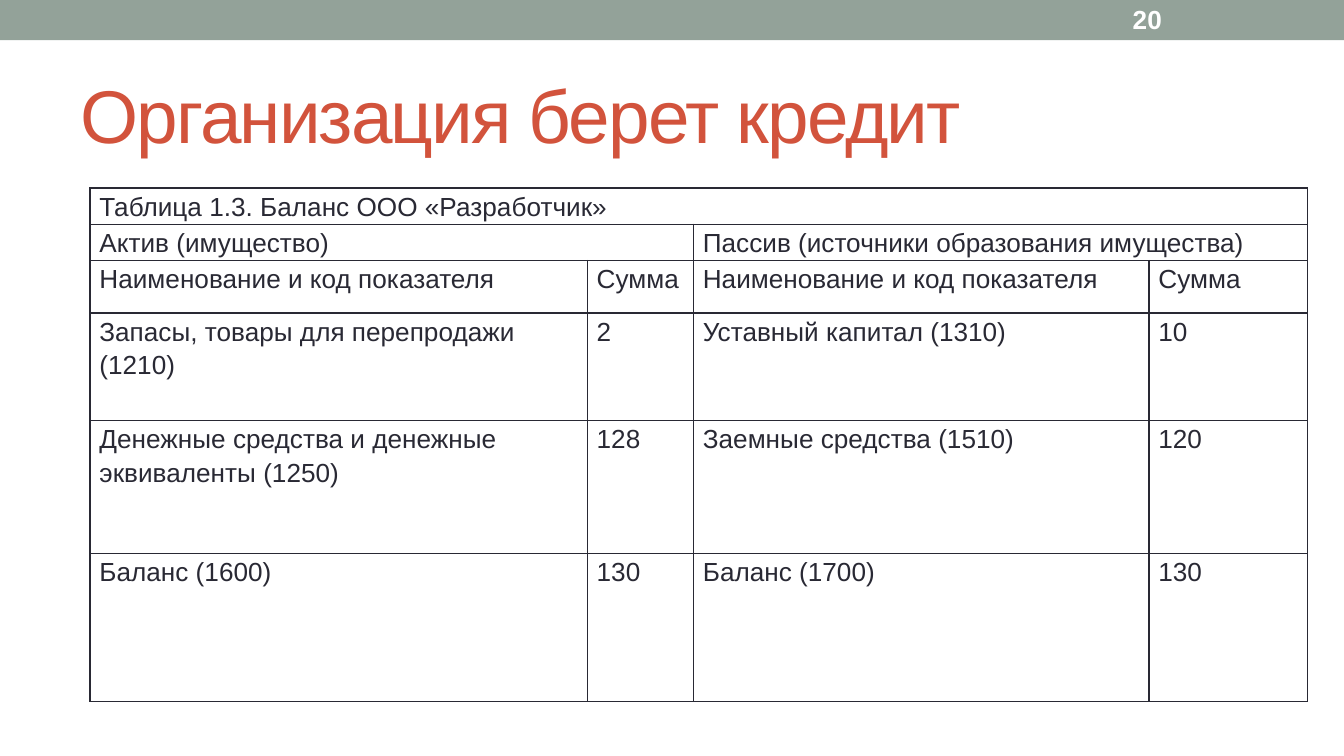
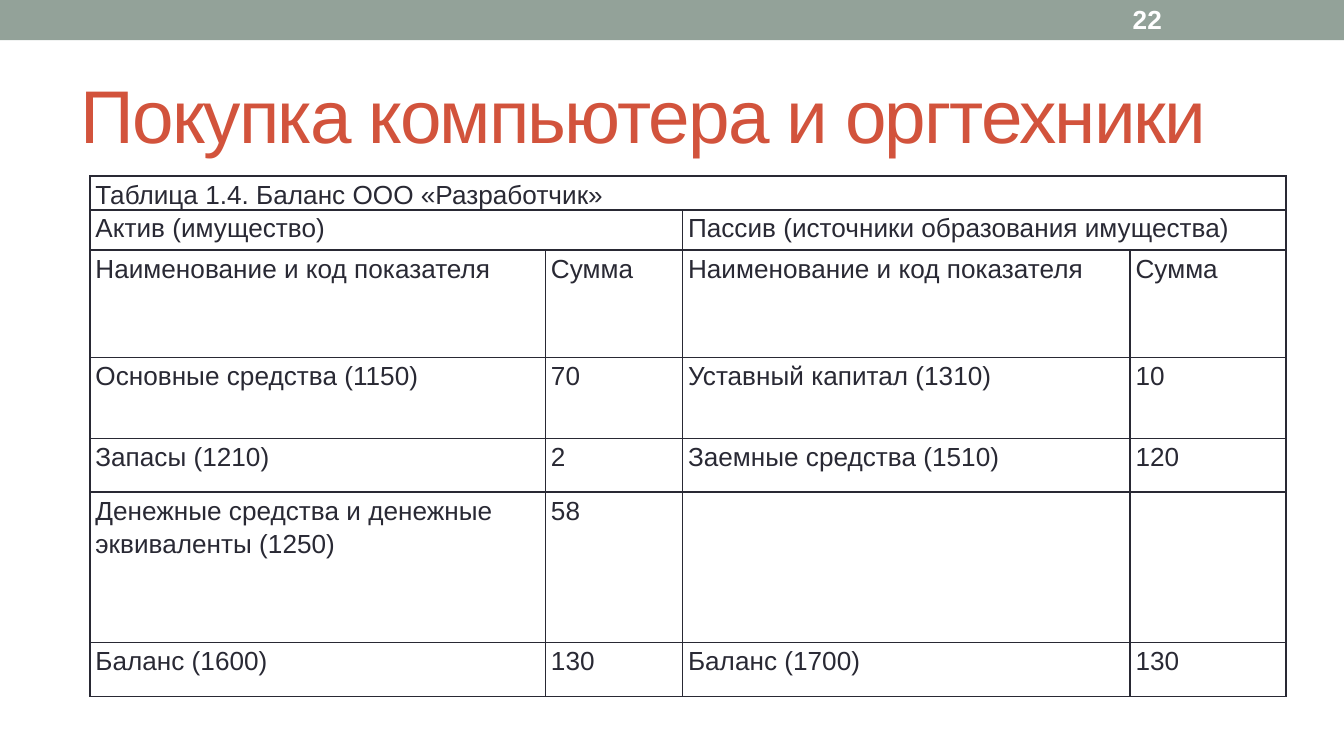
from dataclasses import dataclass

from lxml.etree import SubElement
from pptx import Presentation
from pptx.dml.color import RGBColor
from pptx.enum.shapes import MSO_SHAPE as Preset
from pptx.enum.text import MSO_ANCHOR as Anchor, PP_ALIGN as Align
from pptx.oxml.ns import qn
from pptx.util import Inches, Pt

FONT = "Arial"
COLORS = {"band": "93A299", "title": "D2533C", "ink": "292934", "number": "FFFFFF"}
SLIDE_WIDTH = Inches(10)
SLIDE_HEIGHT = SLIDE_WIDTH * 9 // 16
TITLE_ONLY = 5
TABLE_LEFT = 0.67
SIDES = ("Актив (имущество)", "", "Пассив (источники образования имущества)", "")
HEADINGS = ("Наименование и код показателя", "Сумма") * 2
CASH = "Денежные средства и денежные эквиваленты (1250)"
CAPITAL = ("Уставный капитал (1310)", "10")
LOAN = ("Заемные средства (1510)", "120")
TOTALS = ("Баланс (1600)", "130", "Баланс (1700)", "130")


@dataclass(frozen=True)
class BalanceSheet:
    title: str
    number: str
    caption: str
    top: float
    inset: float
    columns: tuple[float, ...]
    heights: tuple[float, ...]
    entries: tuple[tuple[str, ...], ...]

    @property
    def rows(self) -> tuple[tuple[str, ...], ...]:
        return ((self.caption, "", "", ""), SIDES, HEADINGS, *self.entries, TOTALS)


SHEETS = (
    BalanceSheet(
        title="Организация берет кредит",
        number="20",
        caption="Таблица 1.3. Баланс ООО «Разработчик»",
        top=1.4,
        inset=0.07,
        columns=(3.7, 0.79, 3.39, 1.18),
        heights=(0.27, 0.27, 0.39, 0.8, 0.99, 1.1),
        entries=(
            ("Запасы, товары для перепродажи (1210)", "2", *CAPITAL),
            (CASH, "128", *LOAN),
        ),
    ),
    BalanceSheet(
        title="Покупка компьютера и оргтехники",
        number="22",
        caption="Таблица 1.4. Баланс ООО «Разработчик»",
        top=1.31,
        inset=0.04,
        columns=(3.39, 1.02, 3.33, 1.16),
        heights=(0.1, 0.3, 0.8, 0.6, 0.4, 1.12, 0.4),
        entries=(
            ("Основные средства (1150)", "70", *CAPITAL),
            ("Запасы (1210)", "2", *LOAN),
            (CASH, "58", "", ""),
        ),
    ),
)


def write(frame, text: str, *, size: float, color: str, bold: bool = False,
          tracking: float = 0, line_spacing: float | None = None,
          space_after: float | None = None) -> None:
    frame.word_wrap = True
    para = frame.paragraphs[0]
    para.alignment = Align.LEFT
    if line_spacing is not None:
        para.line_spacing = line_spacing
    if space_after is not None:
        para.space_after = Pt(space_after)
    span = para.add_run()
    span.text = text
    span.font.name = FONT
    span.font.size = Pt(size)
    span.font.bold = bold
    span.font.color.rgb = RGBColor.from_string(COLORS[color])
    if tracking:
        span.font._element.set("spc", str(int(tracking * 100)))


def add_band(page) -> None:
    band = page.shapes.add_shape(Preset.RECTANGLE, 0, 0, SLIDE_WIDTH, Inches(0.3))
    band.shadow.inherit = False
    band.fill.solid()
    band.fill.fore_color.rgb = RGBColor.from_string(COLORS["band"])
    band.line.fill.background()


def add_title(page, text: str) -> None:
    title = page.shapes.title
    title.left, title.top = Inches(0.5), Inches(0.44)
    title.width, title.height = Inches(9), Inches(0.81)
    title.text_frame.vertical_anchor = Anchor.MIDDLE
    write(title.text_frame, text, size=40, color="title", tracking=-1)


def add_number(page, text: str) -> None:
    box = page.shapes.add_textbox(Inches(8.33), Inches(0.01), Inches(1.17), Inches(0.27))
    box.text_frame.vertical_anchor = Anchor.MIDDLE
    write(box.text_frame, text, size=14, color="number", bold=True)


def add_borders(cell) -> None:
    properties = cell._tc.get_or_add_tcPr()
    for position, side in enumerate(("lnL", "lnR", "lnT", "lnB")):
        line = SubElement(properties, qn(f"a:{side}"), w=str(Pt(1)))
        fill = SubElement(line, qn("a:solidFill"))
        SubElement(fill, qn("a:srgbClr"), val=COLORS["ink"])
        properties.insert(position, line)


def add_balance(page, sheet: BalanceSheet) -> None:
    table = page.shapes.add_table(
        len(sheet.rows), len(sheet.columns), Inches(TABLE_LEFT), Inches(sheet.top),
        Inches(sum(sheet.columns)), Inches(sum(sheet.heights)),
    ).table
    table.first_row = table.horz_banding = False
    for column, width in zip(table.columns, sheet.columns):
        column.width = Inches(width)
    for row, height, texts in zip(table.rows, sheet.heights, sheet.rows):
        row.height = Inches(height)
        for cell, text in zip(row.cells, texts):
            cell.margin_left = cell.margin_right = Inches(sheet.inset)
            cell.margin_top = cell.margin_bottom = 0
            cell.fill.background()
            add_borders(cell)
            if text:
                write(cell.text_frame, text, size=14, color="ink",
                      line_spacing=1.15, space_after=10)
    for row, first, last in ((0, 0, 3), (1, 0, 1), (1, 2, 3)):
        table.cell(row, first).merge(table.cell(row, last))


def main() -> None:
    deck = Presentation()
    deck.slide_width, deck.slide_height = SLIDE_WIDTH, SLIDE_HEIGHT
    for sheet in SHEETS:
        page = deck.slides.add_slide(deck.slide_layouts[TITLE_ONLY])
        add_band(page)
        add_title(page, sheet.title)
        add_balance(page, sheet)
        add_number(page, sheet.number)
    deck.save("out.pptx")


if __name__ == "__main__":
    main()
